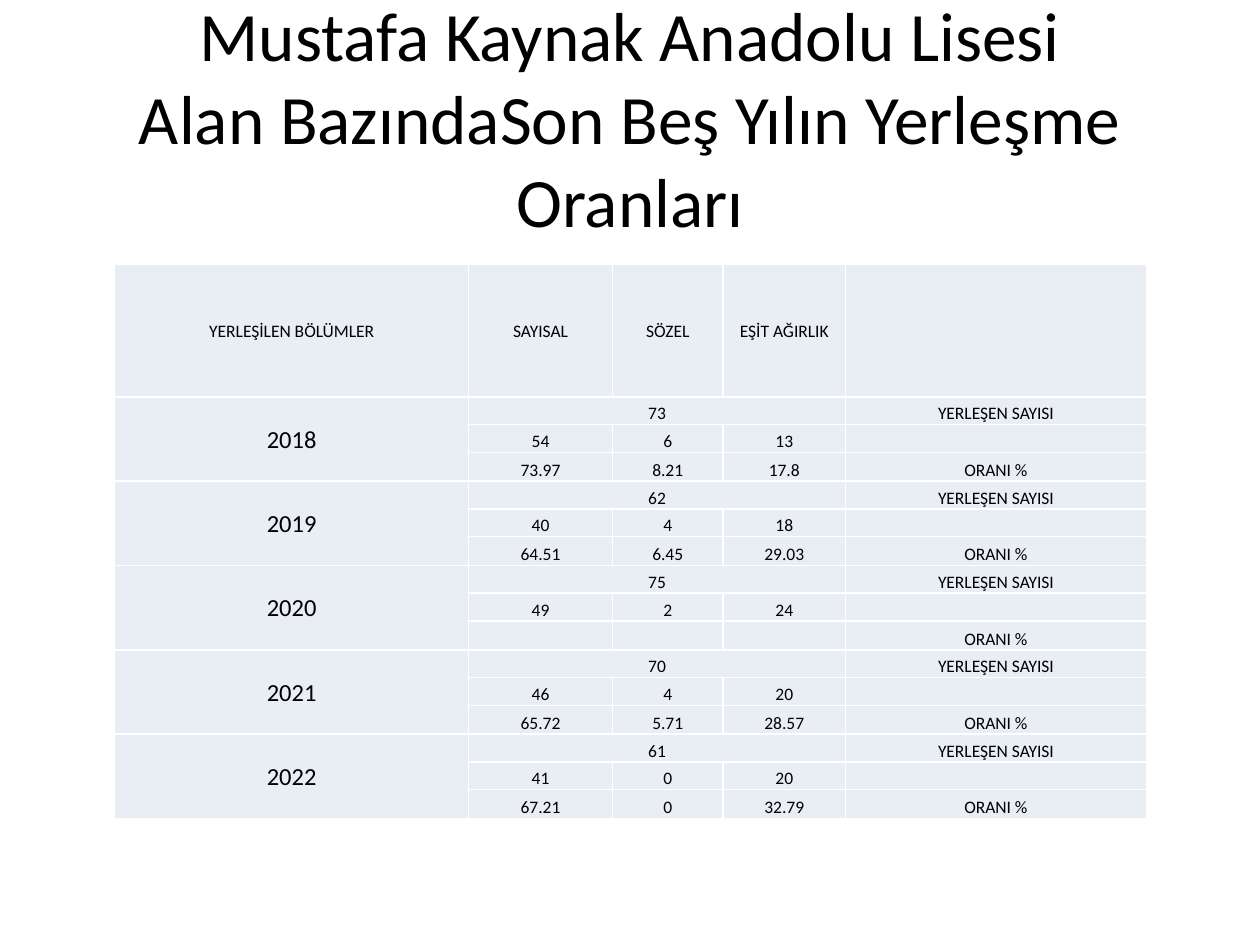
import pptx
import pptx.dml.color
import pptx.enum.text
import pptx.oxml
import pptx.oxml.ns
import pptx.util

Inches, Pt = pptx.util.Inches, pptx.util.Pt
RGB = pptx.dml.color.RGBColor.from_string
ANCHOR = pptx.enum.text.MSO_ANCHOR
CENTER = pptx.enum.text.PP_ALIGN.CENTER

THEME = {
    "font": "Calibri", "text": "000000", "cell": "E9EDF4", "border": "FFFFFF",
    "title_size": 39.6, "year_size": 14, "cell_size": 10, "border_width": 1,
}

TITLE = "Mustafa Kaynak Anadolu Lisesi\vAlan BazındaSon Beş Yılın Yerleşme Oranları"
HEADER = ["YERLEŞİLEN BÖLÜMLER", "SAYISAL", "SÖZEL", "EŞİT AĞIRLIK", ""]
COUNT_LABEL, RATE_LABEL = "YERLEŞEN SAYISI", "ORANI %"
# year, total placed, placed per field, rate per field
YEARS = [
    ("2018", "73", ["54", "6", "13"], ["73.97", "8.21", "17.8"]),
    ("2019", "62", ["40", "4", "18"], ["64.51", "6.45", "29.03"]),
    ("2020", "75", ["49", "2", "24"], ["", "", ""]),
    ("2021", "70", ["46", "4", "20"], ["65.72", "5.71", "28.57"]),
    ("2022", "61", ["41", "0", "20"], ["67.21", "0", "32.79"]),
]

COLUMN_WIDTHS = [2.81, 1.14, 0.88, 0.97, 2.39]
HEADER_HEIGHT = 1.05
YEAR_ROW_HEIGHTS = [0.22, 0.22, 0.23]
ROWS_PER_YEAR = len(YEAR_ROW_HEIGHTS)


def style_text(frame, size):
    for paragraph in frame.paragraphs:
        paragraph.alignment = CENTER
        for run in paragraph.runs:
            run.font.name = THEME["font"]
            run.font.size = Pt(size)
            run.font.color.rgb = RGB(THEME["text"])
        if not paragraph.runs:
            # keeps an empty cell from stretching its row
            paragraph._p.get_or_add_endParaRPr().set("sz", str(size * 100))


def add_borders(cell):
    properties = cell._tc.get_or_add_tcPr()
    for side in ("lnL", "lnR", "lnT", "lnB"):
        properties.append(pptx.oxml.parse_xml(
            f'<a:{side} {pptx.oxml.ns.nsdecls("a")} w="{Pt(THEME["border_width"])}">'
            f'<a:solidFill><a:srgbClr val="{THEME["border"]}"/></a:solidFill></a:{side}>'))


def fill_cell(cell, text, size, anchor):
    cell.text_frame.text = text
    cell.vertical_anchor = anchor
    cell.margin_left = cell.margin_right = cell.margin_top = Inches(0.01)
    cell.margin_bottom = 0
    add_borders(cell)
    cell.fill.solid()
    cell.fill.fore_color.rgb = RGB(THEME["cell"])
    style_text(cell.text_frame, size)


def add_title(slide):
    title = slide.shapes.add_textbox(Inches(0.5), Inches(0.3), Inches(9), Inches(1.25))
    frame = title.text_frame
    frame.word_wrap = True
    frame.vertical_anchor = ANCHOR.MIDDLE
    frame.text = TITLE
    style_text(frame, THEME["title_size"])


def add_placement_table(slide):
    rows = [HEADER]
    for year, total, counts, rates in YEARS:
        rows += [[year, total, "", "", COUNT_LABEL],
                 ["", *counts, ""],
                 ["", *rates, RATE_LABEL]]
    heights = [HEADER_HEIGHT] + YEAR_ROW_HEIGHTS * len(YEARS)

    table = slide.shapes.add_table(
        len(rows), len(HEADER), Inches(0.91), Inches(2.1),
        Inches(sum(COLUMN_WIDTHS)), Inches(sum(heights))).table
    table.first_row = table.horz_banding = False
    for column, width in zip(table.columns, COLUMN_WIDTHS):
        column.width = Inches(width)
    for row, height in zip(table.rows, heights):
        row.height = Inches(height)

    for r, values in enumerate(rows):
        for c, value in enumerate(values):
            is_year = r > 0 and c == 0
            fill_cell(table.cell(r, c), value,
                      THEME["year_size"] if is_year else THEME["cell_size"],
                      ANCHOR.MIDDLE if r == 0 or is_year else ANCHOR.BOTTOM)

    for top in range(1, len(rows), ROWS_PER_YEAR):
        table.cell(top, 0).merge(table.cell(top + ROWS_PER_YEAR - 1, 0))
        table.cell(top, 1).merge(table.cell(top, 3))


def main():
    presentation = pptx.Presentation()
    presentation.slide_width, presentation.slide_height = Inches(10), Inches(7.5)
    slide = presentation.slides.add_slide(presentation.slide_layouts[6])
    add_title(slide)
    add_placement_table(slide)
    presentation.save("out.pptx")


if __name__ == "__main__":
    main()
